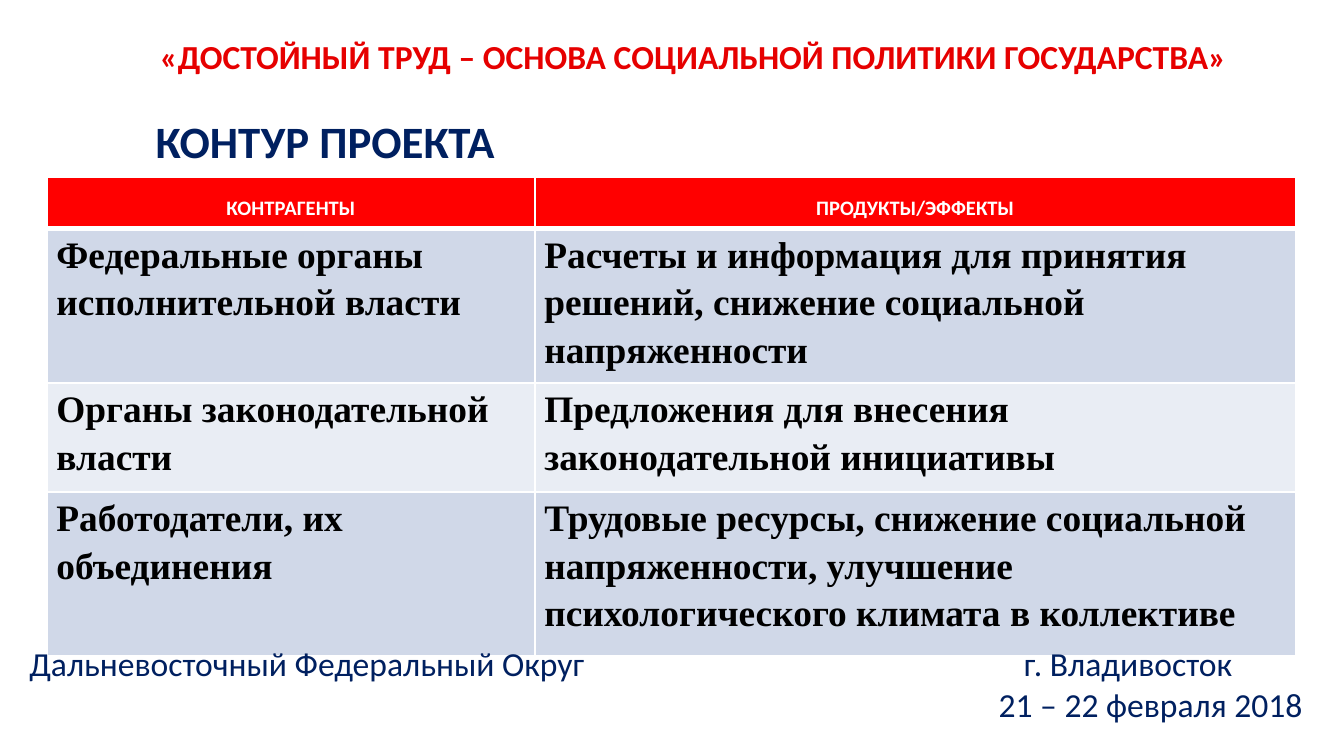
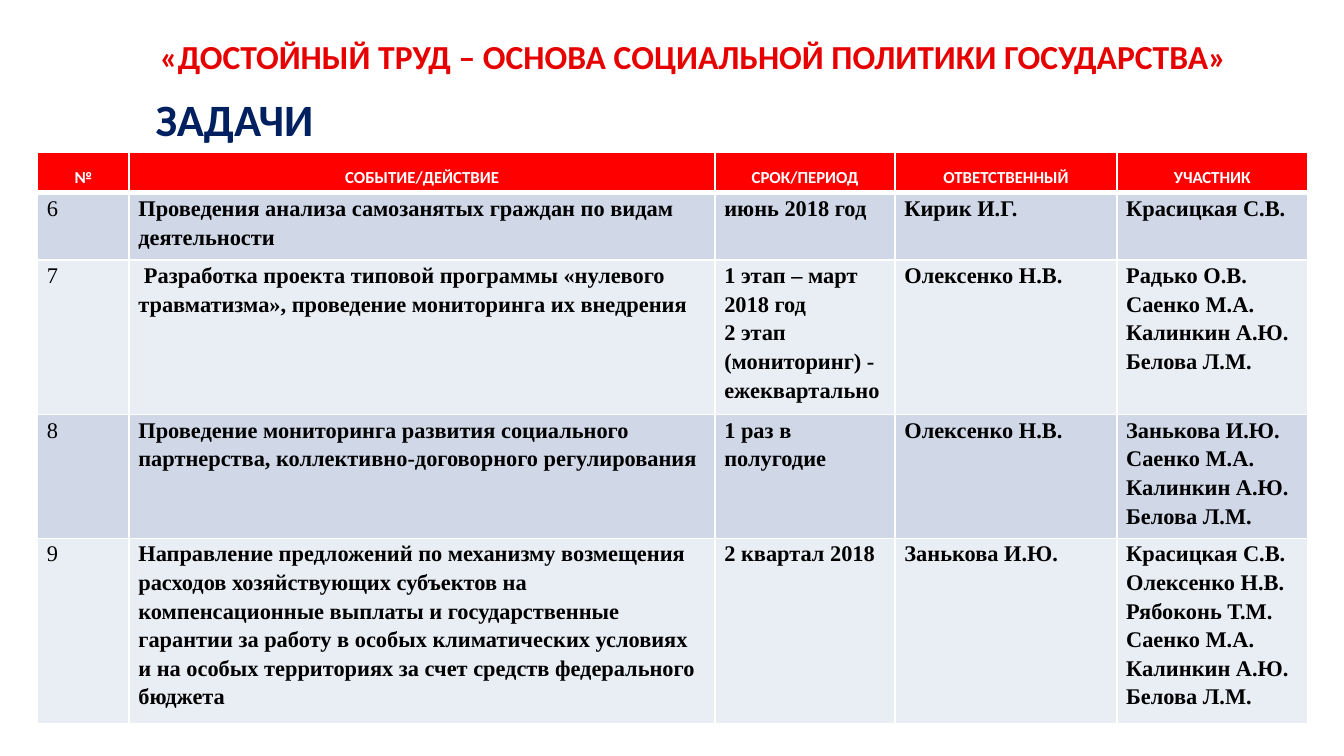
"""Builds two project slides: the project outline and the task table."""
import pptx
import pptx.dml.color
import pptx.enum.text
import pptx.oxml
import pptx.oxml.ns
import pptx.util
from pptx.util import Inches

ALIGN = pptx.enum.text.PP_ALIGN
ANCHOR = pptx.enum.text.MSO_ANCHOR
AUTO_SIZE = pptx.enum.text.MSO_AUTO_SIZE

COLORS = {
    "title": "E60000",
    "navy": "002060",
    "header": "FF0000",
    "band_dark": "D0D8E8",
    "band_light": "E9EDF4",
    "white": "FFFFFF",
    "black": "000000",
}

SLIDE_WIDTH = Inches(10)
SLIDE_HEIGHT = SLIDE_WIDTH * 9 // 16
PROJECT_TITLE = "«ДОСТОЙНЫЙ ТРУД – ОСНОВА СОЦИАЛЬНОЙ ПОЛИТИКИ ГОСУДАРСТВА»"
TITLE_BOX = (0.91, 0.27, 8.5, 0.3)
FOOTER_BOX = (0.12, 4.86, 9.67, 0.45)
FOOTER_TAB = 7.4

SLIDES = [
    {
        "heading": "КОНТУР ПРОЕКТА",
        "heading_top": 0.8,
        "table_at": (0.35, 1.32),
        "columns": [3.63, 5.66],
        "row_heights": [0.38, 0.81, 0.81, 1.22],
        "header_size": 11,
        "body_size": 20,
        "plain_columns": [],
        "rows": [
            ("КОНТРАГЕНТЫ", "ПРОДУКТЫ/ЭФФЕКТЫ"),
            ("Федеральные органы исполнительной власти",
             "Расчеты и информация для принятия решений, снижение социальной напряженности"),
            ("Органы законодательной власти",
             "Предложения для внесения законодательной инициативы"),
            ("Работодатели, их объединения",
             "Трудовые ресурсы, снижение социальной напряженности, улучшение "
             "психологического климата в коллективе"),
        ],
        "footer": [
            ("Дальневосточный Федеральный Округ\tг. Владивосток", ALIGN.LEFT),
            ("21 – 22 февраля 2018", ALIGN.RIGHT),
        ],
    },
    {
        "heading": "ЗАДАЧИ",
        "heading_top": 0.63,
        "table_at": (0.28, 1.13),
        "columns": [0.68, 4.36, 1.34, 1.65, 1.42],
        "row_heights": [0.3, 0.5, 0.93, 0.9, 0.79],
        "header_size": 9,
        "body_size": 12,
        "plain_columns": [0],
        "rows": [
            ("№", "СОБЫТИЕ/ДЕЙСТВИЕ", "СРОК/ПЕРИОД", "ОТВЕТСТВЕННЫЙ", "УЧАСТНИК"),
            ("6", "Проведения анализа самозанятых граждан по видам деятельности",
             "июнь 2018 год", "Кирик И.Г.", "Красицкая С.В."),
            ("7", " Разработка проекта типовой программы «нулевого травматизма», "
             "проведение мониторинга их внедрения",
             "1 этап – март 2018 год\n2 этап (мониторинг) - ежеквартально",
             "Олексенко Н.В.",
             "Радько О.В.\nСаенко М.А.\nКалинкин А.Ю.\nБелова Л.М."),
            ("8", "Проведение мониторинга развития социального партнерства, "
             "коллективно-договорного регулирования",
             "1 раз в полугодие", "Олексенко Н.В.",
             "Занькова И.Ю.\nСаенко М.А.\nКалинкин А.Ю.\nБелова Л.М."),
            ("9", "Направление предложений по механизму возмещения расходов "
             "хозяйствующих субъектов на компенсационные выплаты и государственные "
             "гарантии за работу в особых климатических условиях и на особых "
             "территориях за счет средств федерального бюджета",
             "2 квартал 2018", "Занькова И.Ю.",
             "Красицкая С.В.\nОлексенко Н.В.\nРябоконь Т.М.\nСаенко М.А.\n"
             "Калинкин А.Ю.\nБелова Л.М."),
        ],
        "footer": [],
    },
]


def set_attributes(target, values):
    for name, value in values.items():
        setattr(target, name, value)


def rgb(color):
    return pptx.dml.color.RGBColor.from_string(COLORS[color])


def write_lines(text_frame, lines, size, color, font="Calibri", bold=True, spacing=None):
    for index, (text, alignment) in enumerate(lines):
        paragraph = text_frame.paragraphs[0] if index == 0 else text_frame.add_paragraph()
        set_attributes(paragraph, {"alignment": alignment, "line_spacing": spacing})
        run = paragraph.add_run()
        run.text = text
        set_attributes(run.font, {"size": pptx.util.Pt(size), "name": font, "bold": bold})
        run.font.color.rgb = rgb(color)


def add_text(slide, box, lines, size, color, bold=True, **frame_values):
    text_frame = slide.shapes.add_textbox(*map(Inches, box)).text_frame
    set_attributes(text_frame, {"word_wrap": True, **frame_values})
    write_lines(text_frame, lines, size, color, bold=bold)
    return text_frame


def add_footer(slide, lines):
    text_frame = add_text(slide, FOOTER_BOX, lines, 18, "navy", bold=False,
                          vertical_anchor=ANCHOR.MIDDLE)
    properties = text_frame.paragraphs[0]._p.get_or_add_pPr()
    properties.append(pptx.oxml.parse_xml(
        f'<a:tabLst {pptx.oxml.ns.nsdecls("a")}>'
        f'<a:tab pos="{Inches(FOOTER_TAB)}" algn="l"/></a:tabLst>'))


def set_borders(cell, bottom_width):
    widths = {"lnL": 1, "lnR": 1, "lnT": 1, "lnB": bottom_width}
    for tag, width in widths.items():
        cell._tc.get_or_add_tcPr().append(pptx.oxml.parse_xml(
            f'<a:{tag} {pptx.oxml.ns.nsdecls("a")} w="{pptx.util.Pt(width)}">'
            f'<a:solidFill><a:srgbClr val="{COLORS["white"]}"/></a:solidFill></a:{tag}>'))


def format_cell(cell, is_header, fill):
    side, edge = (0.1, 0.04) if is_header else (0.07, 0)
    set_attributes(cell, {
        "margin_left": Inches(side), "margin_right": Inches(side),
        "margin_top": Inches(edge), "margin_bottom": Inches(edge),
    })
    set_borders(cell, 3 if is_header else 1)
    cell.fill.solid()
    cell.fill.fore_color.rgb = rgb(fill)


def add_data_table(slide, content):
    rows, columns, heights = content["rows"], content["columns"], content["row_heights"]
    size = (sum(columns), sum(heights))
    table = slide.shapes.add_table(
        len(rows), len(columns), *map(Inches, content["table_at"] + size)).table
    for column, width in zip(table.columns, columns):
        column.width = Inches(width)
    for row_index, texts in enumerate(rows):
        table.rows[row_index].height = Inches(heights[row_index])
        is_header = row_index == 0
        band = "band_dark" if row_index % 2 else "band_light"
        for column_index, text in enumerate(texts):
            cell = table.cell(row_index, column_index)
            format_cell(cell, is_header, "header" if is_header else band)
            if is_header:
                write_lines(cell.text_frame, [(text, ALIGN.CENTER)],
                            content["header_size"], "white", spacing=1.5)
            else:
                lines = [(line, ALIGN.LEFT) for line in text.split("\n")]
                write_lines(cell.text_frame, lines, content["body_size"], "black",
                            "Times New Roman",
                            column_index not in content["plain_columns"], 1.15)


def build_slide(presentation, content):
    slide = presentation.slides.add_slide(presentation.slide_layouts[6])
    add_text(slide, (1.06, content["heading_top"], 5, 0.5),
             [(content["heading"], ALIGN.LEFT)], 24, "navy",
             auto_size=AUTO_SIZE.SHAPE_TO_FIT_TEXT)
    add_data_table(slide, content)
    if content["footer"]:
        add_footer(slide, content["footer"])
    add_text(slide, TITLE_BOX, [(PROJECT_TITLE, ALIGN.CENTER)], 18, "title",
             vertical_anchor=ANCHOR.MIDDLE)


def main():
    presentation = pptx.Presentation()
    set_attributes(presentation, {"slide_width": SLIDE_WIDTH, "slide_height": SLIDE_HEIGHT})
    for content in SLIDES:
        build_slide(presentation, content)
    presentation.save("out.pptx")


if __name__ == "__main__":
    main()
